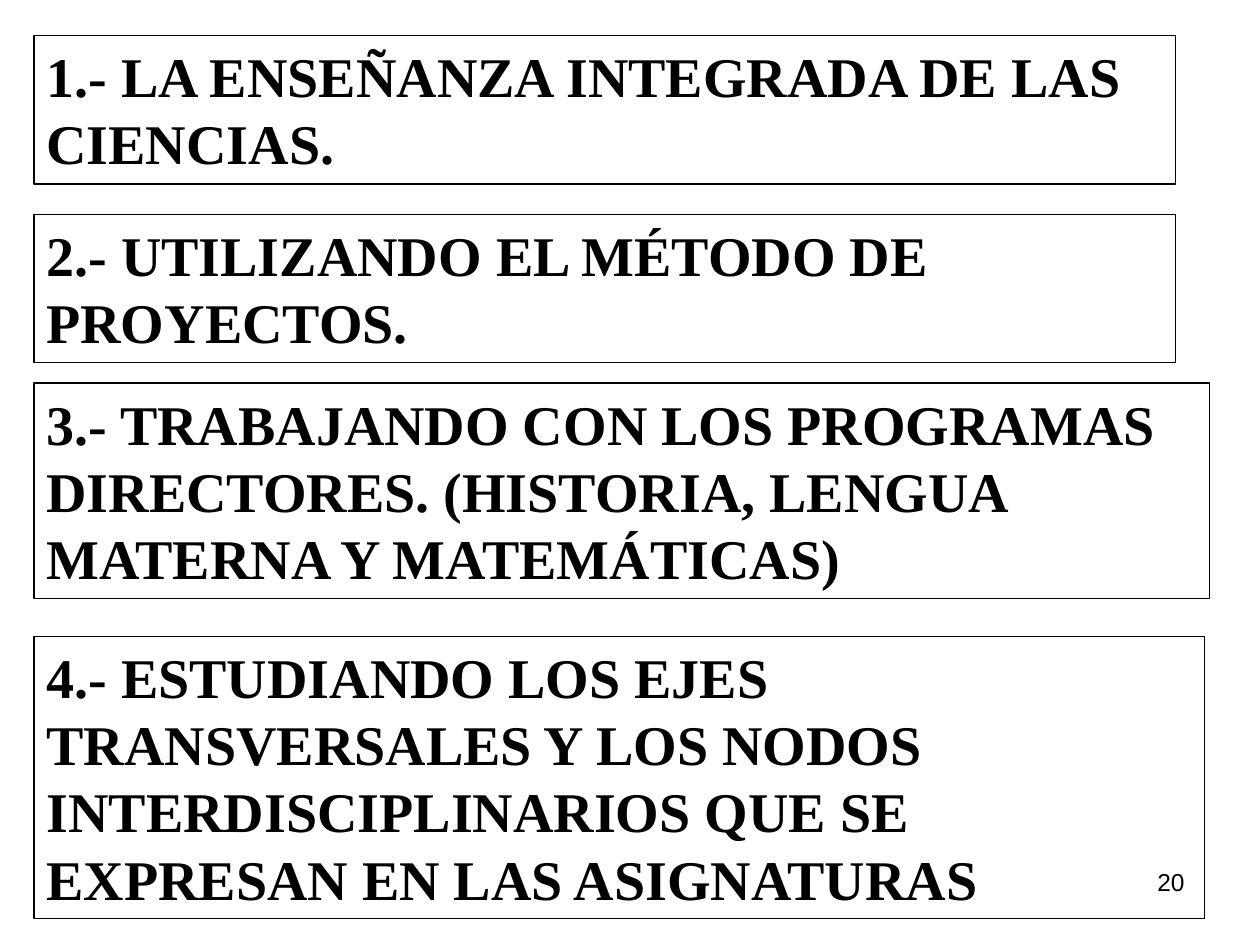
from pptx import Presentation
from pptx.dml.color import RGBColor
from pptx.enum.text import MSO_ANCHOR, MSO_AUTO_SIZE, PP_ALIGN
from pptx.util import Inches, Pt

COLORS = {"ink": "000000"}
INK = RGBColor.from_string(COLORS["ink"])

prs = Presentation()
prs.slide_width, prs.slide_height = Inches(10), Inches(7.5)
s = prs.slides.add_slide(prs.slide_layouts[6])


def add_text(x, y, w, h, text, font, size, bold, align):
    sp = s.shapes.add_textbox(Inches(x), Inches(y), Inches(w), Inches(h))
    tf = sp.text_frame
    tf.word_wrap = True
    tf.vertical_anchor = MSO_ANCHOR.TOP
    p = tf.paragraphs[0]
    p.alignment = align
    r = p.add_run()
    r.text = text
    r.font.name = font
    r.font.size = Pt(size)
    r.font.bold = bold
    r.font.color.rgb = INK
    return sp


# Outlined statements: top, width, height, text
statements = [
    (0.28, 9.06, 1.18, "1.- LA ENSEÑANZA INTEGRADA DE LAS CIENCIAS."),
    (1.7, 9.06, 1.18, "2.- UTILIZANDO EL MÉTODO DE PROYECTOS."),
    (3.04, 9.33, 1.71, "3.- TRABAJANDO CON LOS PROGRAMAS DIRECTORES. "
                       "(HISTORIA, LENGUA MATERNA Y MATEMÁTICAS)"),
    (5.05, 9.29, 2.24, "4.- ESTUDIANDO LOS EJES TRANSVERSALES Y LOS NODOS "
                       "INTERDISCIPLINARIOS QUE SE EXPRESAN EN LAS ASIGNATURAS"),
]
for top, width, height, text in statements:
    sp = add_text(0.27, top, width, height, text,
                  "Times New Roman", 32, True, PP_ALIGN.LEFT)
    sp.text_frame.auto_size = MSO_AUTO_SIZE.SHAPE_TO_FIT_TEXT
    sp.text_frame.paragraphs[0].space_before = Pt(16)
    sp.line.color.rgb = INK
    sp.line.width = Pt(0.75)

# Slide number
add_text(7.17, 6.83, 2.33, 0.52, "20", "Arial", 14, False, PP_ALIGN.RIGHT)

prs.save("out.pptx")
